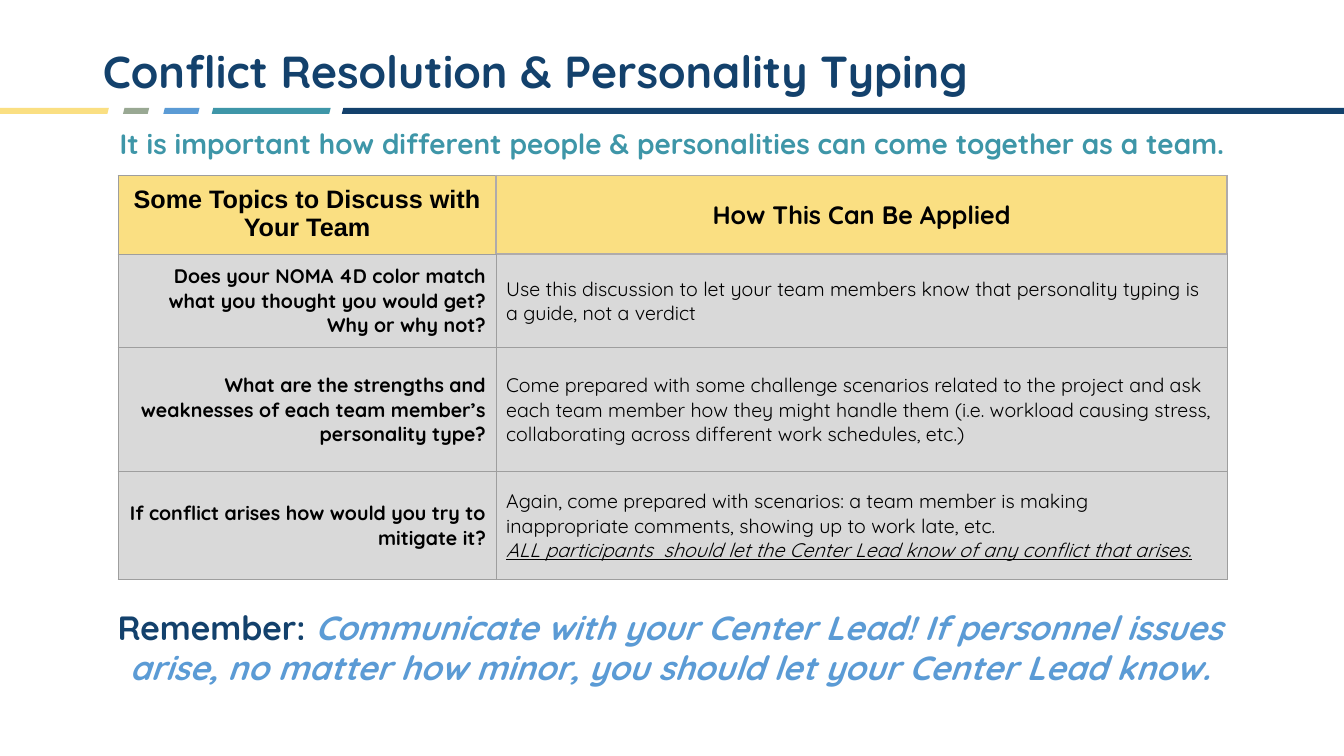
from pptx import Presentation
from pptx.dml.color import RGBColor
from pptx.enum.shapes import MSO_SHAPE as Shape
from pptx.enum.text import MSO_ANCHOR as Anchor, MSO_AUTO_SIZE as AutoSize, PP_ALIGN as Align
from pptx.oxml import parse_xml
from pptx.oxml.ns import nsdecls
from pptx.util import Emu, Pt

PX = 9144
TITLE_ONLY = 5
COLORS = {
    "navy": "13416C", "teal": "3E96A8", "blue": "5B9BD5", "sage": "99A893",
    "yellow": "FADF82", "gray": "D9D9D9", "black": "000000",
    "edge": "9E9E9E", "header_edge": "AFABAB",
}
STRIPES = [(-4, 112, "yellow"), (122, 26, "sage"), (162, 36, "blue"),
           (210, 118, "teal"), (339, 998, "navy")]
HEADERS = ["Some Topics to Discuss with Your Team", "How This Can Be Applied"]
TOPICS = [
    ("Does your NOMA 4D color match what you thought you would get? Why or why not?",
     ["Use this discussion to let your team members know that personality typing is "
      "a guide, not a verdict"]),
    ("What are the strengths and weaknesses of each team member’s personality type?",
     ["Come prepared with some challenge scenarios related to the project and ask each "
      "team member how they might handle them (i.e. workload causing stress, "
      "collaborating across different work schedules, etc.)"]),
    ("If conflict arises how would you try to mitigate it?",
     ["Again, come prepared with scenarios: a team member is making inappropriate "
      "comments, showing up to work late, etc.",
      "ALL participants  should let the Center Lead know of any conflict that arises."]),
]


class TeamSlide:
    """Draws the elements of one slide in a shared style."""

    def __init__(self, deck, font="Quicksand"):
        self.page = deck.slides.add_slide(deck.slide_layouts[TITLE_ONLY])
        self.font = font

    def color(self, name):
        return RGBColor.from_string(COLORS[name])

    def place(self, *lengths):
        return [Emu(length * PX) for length in lengths]

    def style(self, font, size, color, bold=True, name=None):
        font.name = name or self.font
        font.size = Pt(size)
        font.bold = bold
        font.color.rgb = self.color(color)

    def stripe(self, left, width, color):
        bar = self.page.shapes.add_shape(Shape.PARALLELOGRAM, *self.place(left, 107, width, 6))
        bar.shadow.inherit = False
        bar.fill.solid()
        bar.fill.fore_color.rgb = self.color(color)
        bar.line.fill.background()

    def title(self, text, *area):
        box = self.page.shapes.title
        box.left, box.top, box.width, box.height = self.place(*area)
        frame = box.text_frame
        frame.text = text
        frame.auto_size = AutoSize.NONE
        frame.vertical_anchor = Anchor.MIDDLE
        para = frame.paragraphs[0]
        para.alignment = Align.LEFT
        para.line_spacing = 0.9
        self.style(para.font, 32, "navy")

    def message(self, spans, size, *area):
        frame = self.page.shapes.add_textbox(*self.place(*area)).text_frame
        frame.word_wrap = True
        frame.auto_size = AutoSize.SHAPE_TO_FIT_TEXT
        para = frame.paragraphs[0]
        para.alignment = Align.CENTER
        self.style(para.font, size, spans[0][1])
        for text, color, italic in spans:
            span = para.add_run()
            span.text = text
            span.font.italic = italic
            span.font.color.rgb = self.color(color)

    def table(self, columns, rows, left, top):
        area = self.place(left, top, sum(columns), sum(rows))
        grid = self.page.shapes.add_table(len(rows), len(columns), *area).table
        grid.first_row = grid.horz_banding = False
        for column, width in zip(grid.columns, columns):
            column.width = Emu(width * PX)
        for row, height in zip(grid.rows, rows):
            row.height = Emu(height * PX)
        return grid

    def cell(self, cell, lines, align, size, fill, bold, header_sides="", name=None):
        cell.margin_left = cell.margin_right = Emu(10 * PX)
        cell.margin_top = cell.margin_bottom = Emu(10 * PX)
        cell.vertical_anchor = Anchor.MIDDLE
        cell.text_frame.text = "\n".join(lines)
        for para in cell.text_frame.paragraphs:
            para.alignment = align
            self.style(para.font, size, "black", bold, name)
        for side in "LRTB":
            edge, width = ("header_edge", 1) if side in header_sides else ("edge", 0.75)
            cell._tc.get_or_add_tcPr().append(parse_xml(
                f'<a:ln{side} {nsdecls("a")} w="{Pt(width)}"><a:solidFill>'
                f'<a:srgbClr val="{COLORS[edge]}"/></a:solidFill></a:ln{side}>'))
        cell.fill.solid()
        cell.fill.fore_color.rgb = self.color(fill)


def main():
    deck = Presentation()
    deck.slide_width, deck.slide_height = Emu(1333 * PX), Emu(750 * PX)
    slide = TeamSlide(deck)
    for stripe in STRIPES:
        slide.stripe(*stripe)
    slide.title("Conflict Resolution & Personality Typing", 92, 40, 1150, 67)

    grid = slide.table([375, 725], [78, 89, 123, 107], 117, 174)
    slide.cell(grid.cell(0, 0), HEADERS[:1], Align.CENTER, 18, "yellow", True, "R", "Arial")
    slide.cell(grid.cell(0, 1), HEADERS[1:], Align.CENTER, 18, "yellow", True, "LRTB")
    grid.cell(0, 0).vertical_anchor = Anchor.TOP
    for index, (topic, advice) in enumerate(TOPICS, 1):
        slide.cell(grid.cell(index, 0), [topic], Align.RIGHT, 14, "gray", True)
        slide.cell(grid.cell(index, 1), advice, Align.LEFT, 14, "gray", False,
                   "T" if index == 1 else "")
    rule = grid.cell(len(TOPICS), 1).text_frame.paragraphs[-1]
    rule.font.italic = rule.font.underline = True

    slide.message([("It is important how different people & personalities can come "
                    "together as a team.", "teal", False)], 20, 102, 121, 1130, 44)
    slide.message([("Remember: ", "navy", False),
                   ("Communicate with your Center Lead! If personnel issues arise, no matter "
                    "how minor, you should let your Center Lead know.", "blue", True)],
                  24, 76, 597, 1177, 91)
    deck.save("out.pptx")


if __name__ == "__main__":
    main()
